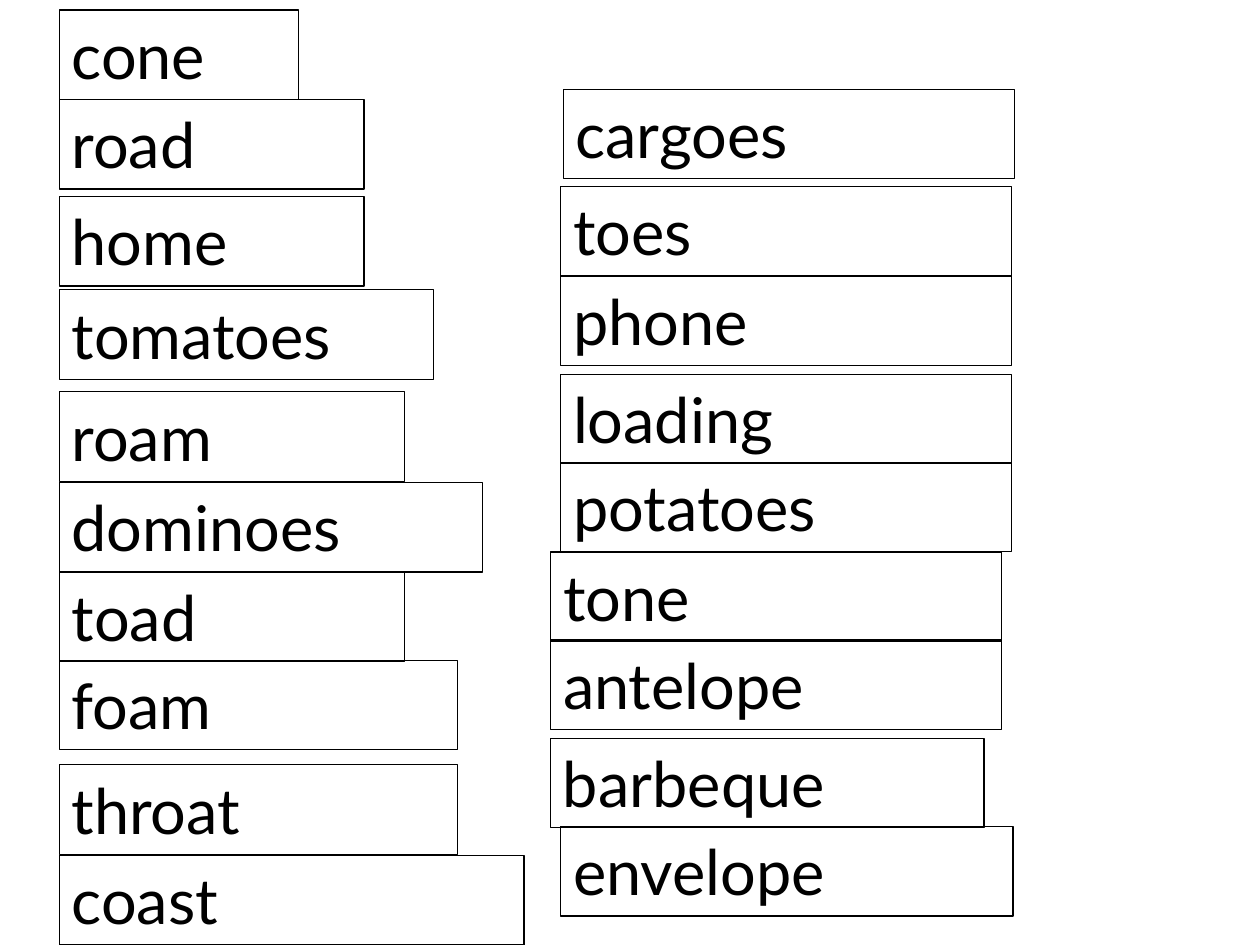
import pptx
import pptx.util
import pptx.dml.color
import pptx.enum.text

Inches = pptx.util.Inches
COLORS = {"ink": "000000"}
HIGH = 0.71

# Left column: word, top, width
LEFT = [
    ("cone", 0.08, 1.9), ("road", 0.79, 2.42), ("home", 1.56, 2.42),
    ("tomatoes", 2.3, 2.97), ("roam", 3.11, 2.74), ("dominoes", 3.83, 3.36),
    ("toad", 4.54, 2.74), ("foam", 5.24, 3.16), ("throat", 6.07, 3.16),
    ("coast", 6.79, 3.69),
]

# Right column: word, left, top, width
RIGHT = [
    ("cargoes", 4.47, 0.71, 3.58), ("toes", 4.45, 1.48, 3.58),
    ("phone", 4.45, 2.19, 3.58), ("loading", 4.45, 2.97, 3.58),
    ("potatoes", 4.45, 3.67, 3.58), ("tone", 4.37, 4.38, 3.58),
    ("antelope", 4.37, 5.08, 3.58), ("barbeque", 4.37, 5.86, 3.44),
    ("envelope", 4.45, 6.56, 3.59),
]


class Deck:
    """Holds the style and the current slide."""

    frame = {"word_wrap": True,
             "auto_size": pptx.enum.text.MSO_AUTO_SIZE.SHAPE_TO_FIT_TEXT}
    font = {"name": "Lato", "size": pptx.util.Pt(36)}

    def __init__(self, slide):
        self.slide = slide

    def color(self, name):
        return pptx.dml.color.RGBColor.from_string(COLORS[name])

    def card(self, word, left, top, width):
        box = self.slide.shapes.add_textbox(
            *map(Inches, (left, top, width, HIGH)))
        box.line.color.rgb = self.color("ink")
        box.line.width = pptx.util.Pt(0.75)
        text = box.text_frame
        run = text.paragraphs[0].add_run()
        run.text = word
        run.font.color.rgb = self.color("ink")
        for part, style in ((text, self.frame), (run.font, self.font)):
            for key, value in style.items():
                setattr(part, key, value)


def main():
    show = pptx.Presentation()
    show.slide_width, show.slide_height = Inches(10), Inches(7.5)
    deck = Deck(show.slides.add_slide(show.slide_layouts[6]))

    # Word cards
    for word, top, width in LEFT:
        deck.card(word, 0.47, top, width)
    for row in RIGHT:
        deck.card(*row)

    show.save("out.pptx")


if __name__ == "__main__":
    main()
